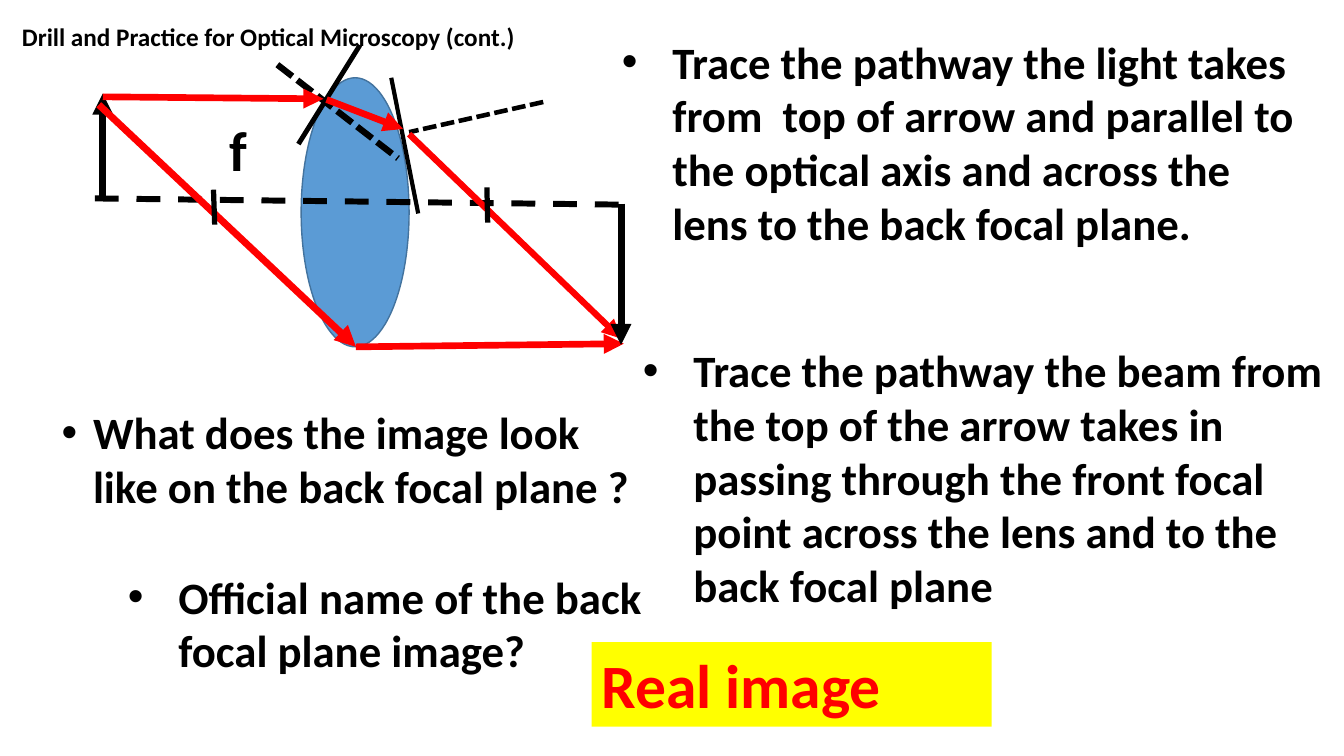
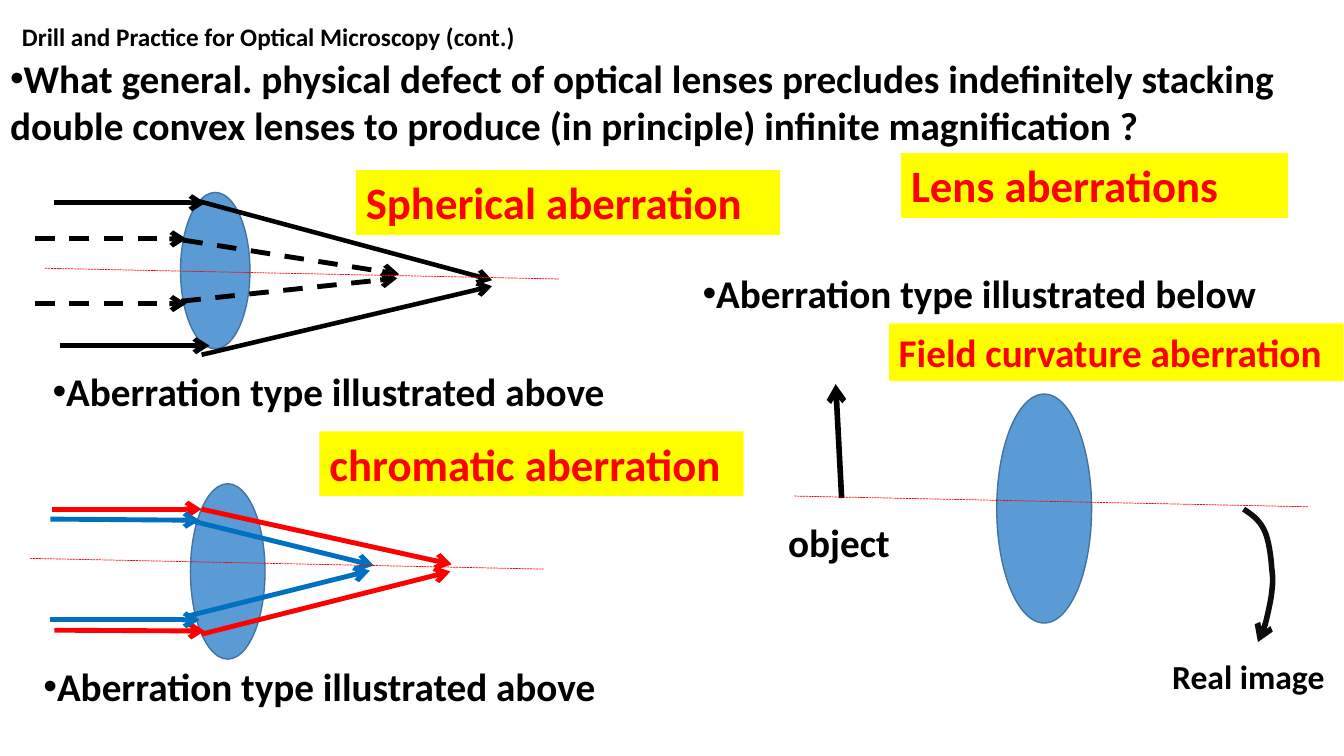
from dataclasses import dataclass

from lxml import etree
from pptx import Presentation
from pptx import util as u
from pptx.dml.color import RGBColor
from pptx.enum import dml, shapes, text
from pptx.oxml import ns

BLACK = RGBColor(0x00, 0x00, 0x00)
SOFT_BLACK = RGBColor(0x0D, 0x0D, 0x0D)
RED = RGBColor(0xFF, 0x00, 0x00)
BLUE = RGBColor(0x00, 0x70, 0xC0)
YELLOW = RGBColor(0xFF, 0xFF, 0x00)
LENS_FILL = RGBColor(0x5B, 0x9B, 0xD5)
LENS_EDGE = RGBColor(0x43, 0x73, 0x9E)

FONT = "Calibri"
TITLE = "Drill and Practice for Optical Microscopy (cont.)"
COMPARISON_LAYOUT = 4  # a title and four body placeholders
DASH = dml.MSO_LINE.DASH
SHORT_DASH = dml.MSO_LINE.SQUARE_DOT


@dataclass(frozen=True)
class Box:
    """Left, top, width and height in centimetres."""
    left: float
    top: float
    width: float
    height: float

    def lengths(self):
        return [u.Cm(value) for value in (self.left, self.top, self.width, self.height)]


@dataclass(frozen=True)
class Label:
    words: str
    box: Box
    size: float
    hanging: float = 0


@dataclass(frozen=True)
class Ray:
    """A straight line between two points in centimetres."""
    start: tuple[float, float]
    end: tuple[float, float]
    width: float = 3.5
    color: RGBColor = BLACK
    dash: dml.MSO_LINE | None = None
    arrow: str | None = None


def write(shape, label: Label, color: RGBColor = BLACK, wrap: bool = True):
    frame = shape.text_frame
    frame.word_wrap = wrap
    frame.auto_size = text.MSO_AUTO_SIZE.NONE
    frame.vertical_anchor = text.MSO_ANCHOR.TOP
    paragraph = frame.paragraphs[0]
    paragraph.text = label.words
    paragraph.alignment = text.PP_ALIGN.LEFT
    paragraph.space_before = u.Pt(0)
    font = paragraph.font
    font.name, font.size, font.bold = FONT, u.Pt(label.size), True
    font.color.rgb = color
    return paragraph


def place(shape, box: Box) -> None:
    shape.left, shape.top, shape.width, shape.height = box.lengths()


def set_bullet(paragraph, hanging: float) -> None:
    properties = paragraph._p.get_or_add_pPr()
    properties.set("marL", str(u.Cm(hanging)))
    properties.set("indent", str(-u.Cm(hanging)))
    bullet_font = etree.Element(ns.qn("a:buFont"), typeface="Arial")
    bullet = etree.Element(ns.qn("a:buChar"), char="•")
    default_font = properties.find(ns.qn("a:defRPr"))
    default_font.addprevious(bullet_font)
    default_font.addprevious(bullet)


def add_question_slide(presentation, questions: list[Label]):
    """Add a slide with the shared title and one body placeholder per question."""
    slide = presentation.slides.add_slide(presentation.slide_layouts[COMPARISON_LAYOUT])
    title, *bodies = slide.placeholders
    title_label = Label(TITLE, Box(0.3, 0.41, 13.03, 1.02), 18)
    place(title, title_label.box)
    write(title, title_label, wrap=False)
    for body, question in zip(bodies, questions, strict=True):
        place(body, question.box)
        set_bullet(write(body, question), question.hanging)
    return slide


def add_caption(slide, label: Label) -> None:
    write(slide.shapes.add_textbox(*label.box.lengths()), label)


def add_answer(slide, label: Label) -> None:
    shape = slide.shapes.add_shape(shapes.MSO_SHAPE.RECTANGLE, *label.box.lengths())
    shape.shadow.inherit = False
    shape.fill.solid()
    shape.fill.fore_color.rgb = YELLOW
    shape.line.fill.background()
    write(shape, label, RED)


def add_lens(slide, box: Box) -> None:
    shape = slide.shapes.add_shape(shapes.MSO_SHAPE.OVAL, *box.lengths())
    shape.shadow.inherit = False
    shape.fill.solid()
    shape.fill.fore_color.rgb = LENS_FILL
    shape.line.color.rgb = LENS_EDGE
    shape.line.width = u.Pt(1)


def style_line(shape, color: RGBColor, width: float, dash=None, arrow=None) -> None:
    line = shape.line
    line.color.rgb = color
    line.width = u.Pt(width)
    if dash is not None:
        line.dash_style = dash
    if arrow:
        etree.SubElement(line._get_or_add_ln(), ns.qn("a:tailEnd"), type=arrow)


def add_ray(slide, ray: Ray) -> None:
    ends = [u.Cm(value) for value in (*ray.start, *ray.end)]
    connector = slide.shapes.add_connector(shapes.MSO_CONNECTOR.STRAIGHT, *ends)
    style_line(connector, ray.color, ray.width, ray.dash, ray.arrow)
    etree.SubElement(connector._element.spPr, ns.qn("a:effectLst"))


def tilted_axis(left: float, top: float) -> Ray:
    return Ray((left, top), (left + 12.95, top + 0.27), 0.5, RED, SHORT_DASH)


def bezier_points(controls: list[tuple[float, float]], steps: int = 8):
    """Sample a chain of cubic curves that share their end points."""
    points = [controls[0]]
    for first in range(0, len(controls) - 1, 3):
        segment = controls[first:first + 4]
        for step in range(1, steps + 1):
            t = step / steps
            weights = ((1 - t) ** 3, 3 * t * (1 - t) ** 2, 3 * t * t * (1 - t), t ** 3)
            points.append(tuple(sum(w * point[axis] for w, point in zip(weights, segment))
                                for axis in (0, 1)))
    return points


def add_curved_arrow(slide, controls: list[tuple[float, float]]) -> None:
    start, *others = [(u.Cm(x), u.Cm(y)) for x, y in bezier_points(controls)]
    builder = slide.shapes.build_freeform(*start)
    builder.add_line_segments(others, close=False)
    curve = builder.convert_to_shape()
    curve.shadow.inherit = False
    curve.fill.background()
    style_line(curve, SOFT_BLACK, 4, arrow="arrow")


def build_ray_tracing(presentation) -> None:
    slide = add_question_slide(presentation, [
        Label("Trace the pathway the light takes from  top of arrow and parallel to the "
              "optical axis and across the lens to the back focal plane.",
              Box(15.42, 0.74, 17.88, 5.74), 32, 1.27),
        Label("Trace the pathway the beam from the top of the arrow takes in passing through "
              "the front focal point across the lens and to the back focal plane",
              Box(15.95, 8.51, 17.93, 7.09), 32, 1.27),
        Label("What does the image look like on the back focal plane ?",
              Box(1.3, 10.08, 15.06, 3), 32, 0.79),
        Label("Official name of the back focal plane image?",
              Box(2.97, 14.22, 14.88, 3), 32, 1.27),
    ])
    add_lens(slide, Box(7.59, 1.96, 2.72, 6.78))
    optical_axis = Ray((2.39, 5), (15.95, 5.16), 4.25, dash=DASH)
    surfaces_and_normals = [
        Ray((9.07, 1.14), (7.52, 3.63)),
        Ray((6.99, 1.63), (10.03, 3.99), 4.5, dash=SHORT_DASH),
        Ray((9.86, 1.96), (10.54, 5.38), 3),
        Ray((13.69, 2.57), (10.31, 3.33), 3.25, dash=SHORT_DASH),
    ]
    focal_marks = [
        Ray((5.38, 4.78), (5.41, 5.66), 3.75),
        Ray((12.27, 4.72), (12.29, 5.61), 3.75),
    ]
    object_arrow = Ray((2.59, 5.05), (2.59, 2.36), 5, arrow="triangle")
    image_arrow = Ray((15.65, 5.13), (15.65, 8.69), 5, arrow="triangle")
    light = [Ray(start, end, width, RED, arrow="triangle") for start, end, width in (
        ((2.59, 2.44), (8.15, 2.49), 4.75),
        ((8.23, 2.51), (10.16, 3.25), 4.75),
        ((10.31, 3.38), (15.65, 8.53), 4.5),
        ((2.49, 2.64), (8.97, 8.74), 5),
        ((8.97, 8.74), (15.72, 8.66), 4.75),
    )]
    for ray in (optical_axis, *surfaces_and_normals, object_arrow, *light,
                *focal_marks, image_arrow):
        add_ray(slide, ray)
    add_caption(slide, Label("f", Box(5.54, 2.79, 1.3, 1.96), 40))
    add_answer(slide, Label("Real image", Box(14.91, 16.18, 10.08, 2.13), 44))


def build_aberrations(presentation) -> None:
    slide = add_question_slide(presentation, [
        Label("What general. physical defect of optical lenses precludes indefinitely stacking "
              "double convex lenses to produce (in principle) infinite magnification ?",
              Box(0, 1.24, 32.97, 2.64), 28),
        Label("Aberration type illustrated above", Box(1.07, 9.12, 16.99, 1.45), 28),
        Label("Aberration type illustrated above", Box(0.84, 16.56, 16.66, 1.45), 28),
        Label("Aberration type illustrated below", Box(17.45, 6.65, 15.72, 1.45), 28),
    ])
    for lens in (Box(4.55, 4.85, 1.75, 3.94), Box(4.8, 12.19, 1.88, 4.42),
                 Box(25.12, 9.93, 2.39, 5.77)):
        add_lens(slide, lens)

    outer = [((1.37, 5.11), (5.18, 5.11), 3.5), ((1.5, 8.71), (5.28, 8.71), 3.5),
             ((5.05, 5.08), (12.4, 7.06), 3.25), ((5.08, 8.94), (12.4, 7.21), 3.25)]
    inner = [((0.89, 6.02), (4.7, 6.02), 3.5), ((0.89, 7.65), (4.7, 7.65), 3.5),
             ((4.62, 6.05), (10.06, 6.91), 3.5), ((4.57, 7.59), (10.01, 7.01), 3.5)]
    red_light = [((1.32, 12.83), (5.08, 12.83), 3.5), ((1.37, 15.88), (5.16, 15.9), 3.5),
                 ((5.08, 12.83), (11.38, 14.22), 3.5), ((5.08, 15.98), (11.35, 14.4), 3.5)]
    blue_light = [((1.27, 13.08), (5.03, 13.11), 3.5), ((1.27, 15.62), (5.03, 15.62), 3.5),
                  ((4.85, 13.13), (9.42, 14.25), 3.5), ((4.75, 15.52), (9.32, 14.38), 3.5)]
    object_arrow = [((21.21, 12.55), (21.06, 9.68), 4)]
    for rays, color, dash in ((outer, BLACK, None), (inner, BLACK, DASH),
                              (red_light, RED, None), (blue_light, BLUE, None),
                              (object_arrow, BLACK, None)):
        for start, end, width in rays:
            add_ray(slide, Ray(start, end, width, color, dash, "arrow"))
    for left, top in ((1.14, 6.76), (0.76, 14.07), (20.02, 12.5)):
        add_ray(slide, tilted_axis(left, top))
    add_curved_arrow(slide, [
        (31.34, 12.83), (31.52, 12.95), (31.72, 13.08),
        (31.85, 13.34), (31.98, 13.59), (32.03, 14.05),
        (32.05, 14.33), (32.08, 14.58), (32.08, 14.66),
        (32.05, 14.91), (32.03, 15.16), (31.9, 15.67),
        (31.85, 15.88), (31.78, 16.08), (31.75, 16.13), (31.7, 16.18),
    ])
    add_caption(slide, Label("object", Box(19.61, 12.93, 3.23, 1.45), 28))
    add_caption(slide, Label("Real image", Box(29.29, 16.41, 4.57, 1.27), 24))
    for answer in (
        Label("Lens aberrations", Box(22.71, 3.86, 9.75, 1.63), 32),
        Label("Spherical aberration", Box(8.97, 4.29, 10.69, 1.63), 32),
        Label("chromatic aberration", Box(8.05, 10.87, 10.69, 1.63), 32),
        Label("Field curvature aberration", Box(22.4, 8.15, 11.46, 1.45), 28),
    ):
        add_answer(slide, answer)


def main() -> None:
    presentation = Presentation()
    presentation.slide_width, presentation.slide_height = u.Cm(33.87), u.Cm(19.05)
    build_ray_tracing(presentation)
    build_aberrations(presentation)
    presentation.save("out.pptx")


if __name__ == "__main__":
    main()
